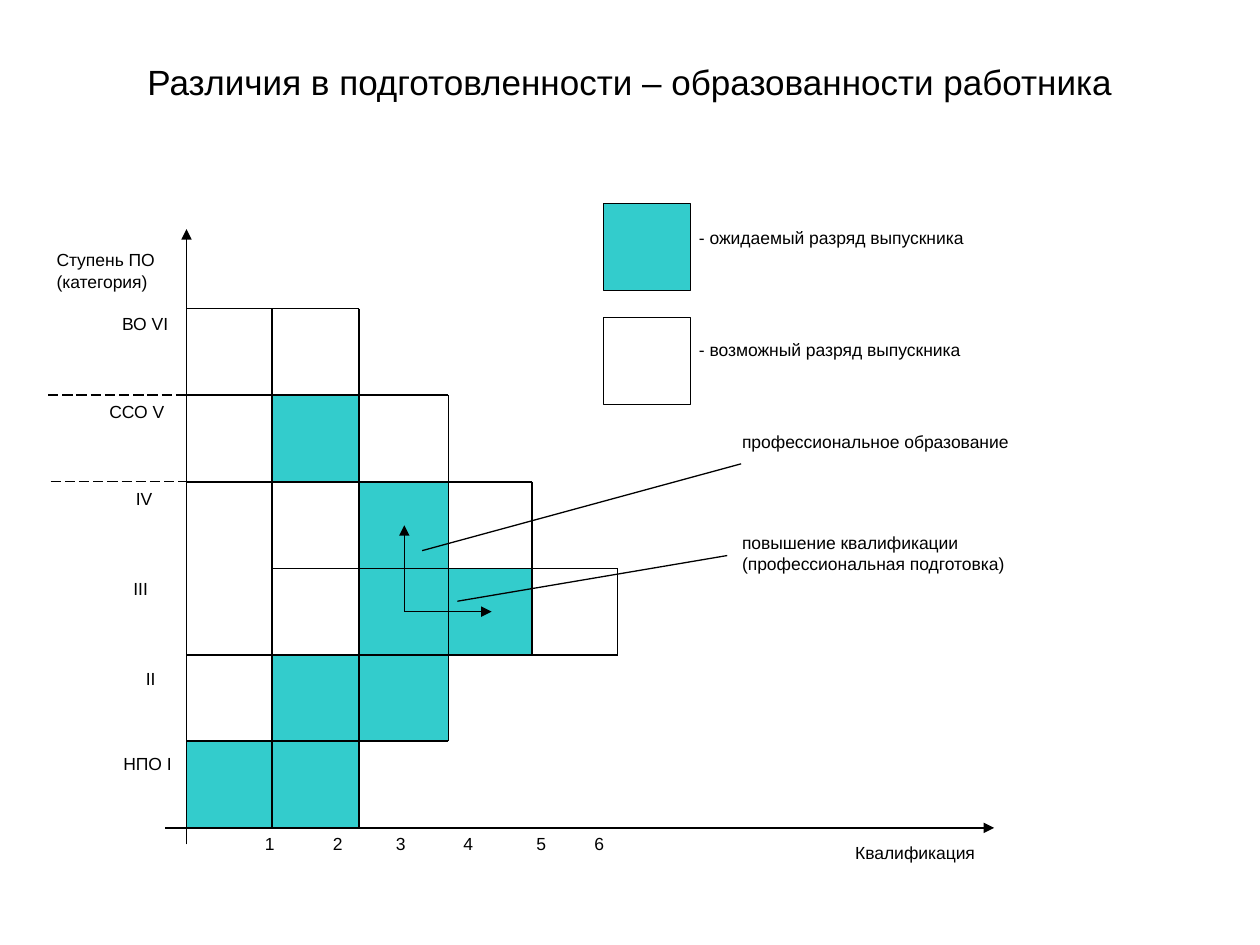
from typing import NamedTuple

from lxml import etree
from pptx import Presentation
from pptx.dml.color import RGBColor
from pptx.enum import dml, shapes, text
from pptx.oxml.ns import qn
from pptx.util import Cm, Pt

COLORS = {"ink": "000000", "expected": "33CCCC", "possible": "FFFFFF"}
FONT = "Arial"

COLUMN_EDGES = [3.76, 5.49, 7.24, 9.04, 10.72, 12.45]
GRID_TOP, GRID_BOTTOM = 6.22, 16.69
ROW_HEIGHT = (GRID_BOTTOM - GRID_TOP) / 6
ROW_EDGES = [GRID_TOP + ROW_HEIGHT * row for row in range(7)]
LEFT = COLUMN_EDGES[0]


class Cell(NamedTuple):
    column: int
    row: int
    color: str


class Label(NamedTuple):
    left: float
    top: float
    width: float
    height: float
    lines: list[str]
    align: text.PP_ALIGN = text.PP_ALIGN.LEFT
    size: float = 10
    anchor: text.MSO_ANCHOR = text.MSO_ANCHOR.TOP


class Stroke(NamedTuple):
    x1: float
    y1: float
    x2: float
    y2: float
    weight: float = 0.75
    arrow: bool = False
    dashed: bool = False


CELLS = [
    Cell(1, 1, "expected"), Cell(2, 2, "expected"),
    Cell(2, 3, "expected"), Cell(3, 3, "expected"),
    Cell(1, 4, "expected"), Cell(2, 4, "expected"),
    Cell(0, 5, "expected"), Cell(1, 5, "expected"),
    Cell(0, 2, "possible"), Cell(0, 3, "possible"),
]

# First and last crossing edge of each grid line, with its weight
ROW_SPANS = [(0, 2, 1), (0, 3, 1), (0, 4, 1), (1, 5, 0.75), (0, 5, 1), (0, 3, 1), (0, 4, 1)]
COLUMN_SPANS = [(0, 6), (0, 6), (0, 6), (1, 5), (2, 4), (3, 4)]

AXES = [
    Stroke(LEFT, 17.02, LEFT, 4.62, arrow=True),
    Stroke(3.33, GRID_BOTTOM, 20.04, GRID_BOTTOM, arrow=True),
]
LEVEL_BREAKS = [
    Stroke(0.97, ROW_EDGES[1], LEFT, ROW_EDGES[1], dashed=True),
    Stroke(1.02, ROW_EDGES[2], LEFT, ROW_EDGES[2], dashed=True),
]
GROWTH_ARROWS = [
    Stroke(8.15, 12.33, 9.91, 12.33, arrow=True),
    Stroke(8.15, 12.33, 8.15, 10.59, arrow=True),
]
CALLOUTS = [Stroke(8.51, 11.1, 14.94, 9.35), Stroke(9.22, 12.12, 14.66, 11.2)]

RIGHT = text.PP_ALIGN.RIGHT
CENTER = text.PP_ALIGN.CENTER
LABELS = [
    Label(1.27, 0.76, 22.86, 1.75, ["Различия в подготовленности – образованности работника"],
          CENTER, 20, text.MSO_ANCHOR.MIDDLE),
    Label(0.94, 4.93, 3.66, 1.3, ["Ступень ПО (категория)"]),
    Label(1.35, 6.22, 2.24, 1.04, ["ВО VI"], RIGHT),
    Label(0.94, 7.98, 2.57, 1.04, ["ССО V"], RIGHT),
    Label(2.54, 9.73, 1.14, 1.04, ["IV"]),
    Label(2.49, 11.56, 1.07, 1.04, ["III"]),
    Label(2.74, 13.36, 0.89, 1.04, ["II"]),
    Label(1.35, 15.09, 2.31, 1.04, ["НПО I"], RIGHT),
    Label(17.04, 16.87, 4.22, 0.79, ["Квалификация"]),
    Label(13.89, 4.47, 7.75, 1.04, ["- ожидаемый разряд выпускника"]),
    Label(13.89, 6.73, 8.15, 1.04, ["- возможный разряд выпускника"]),
    Label(14.76, 8.59, 7.11, 1.6, ["профессиональное образование"]),
    Label(14.76, 10.62, 7.01, 2.03,
          ["повышение квалификации", "(профессиональная подготовка)"]),
]
GRADE_CENTERS = [5.44, 6.81, 8.08, 9.44, 10.91, 12.08]
GRADE_WIDTH = 1


def rgb(name: str) -> RGBColor:
    return RGBColor.from_string(COLORS[name])


def draw_box(slide, left: float, top: float, width: float, height: float,
             fill: str, outlined: bool = False) -> None:
    box = slide.shapes.add_shape(shapes.MSO_SHAPE.RECTANGLE,
                                 Cm(left), Cm(top), Cm(width), Cm(height))
    box.shadow.inherit = False
    box.fill.solid()
    box.fill.fore_color.rgb = rgb(fill)
    if outlined:
        box.line.color.rgb = rgb("ink")
        box.line.width = Pt(0.75)
    else:
        box.line.fill.background()


def draw_cell(slide, cell: Cell) -> None:
    left, right = COLUMN_EDGES[cell.column:cell.column + 2]
    draw_box(slide, left, ROW_EDGES[cell.row], right - left, ROW_HEIGHT, cell.color)


def draw_stroke(slide, stroke: Stroke) -> None:
    connector = slide.shapes.add_connector(
        shapes.MSO_CONNECTOR.STRAIGHT,
        Cm(stroke.x1), Cm(stroke.y1), Cm(stroke.x2), Cm(stroke.y2))
    connector.line.color.rgb = rgb("ink")
    connector.line.width = Pt(stroke.weight)
    if stroke.dashed:
        connector.line.dash_style = dml.MSO_LINE.LONG_DASH
    if stroke.arrow:
        etree.SubElement(connector.line._get_or_add_ln(), qn("a:tailEnd"), type="triangle")
    etree.SubElement(connector._element.spPr, qn("a:effectLst"))


def draw_label(slide, label: Label) -> None:
    box = slide.shapes.add_textbox(Cm(label.left), Cm(label.top),
                                   Cm(label.width), Cm(label.height))
    frame = box.text_frame
    frame.word_wrap = True
    frame.vertical_anchor = label.anchor
    frame.margin_left = frame.margin_right = Cm(0.2)
    frame.margin_top = frame.margin_bottom = Cm(0.1)
    frame.text = "\n".join(label.lines)
    for paragraph in frame.paragraphs:
        paragraph.alignment = label.align
        paragraph.font.name = FONT
        paragraph.font.size = Pt(label.size)
        paragraph.font.color.rgb = rgb("ink")


def grid_strokes() -> list[Stroke]:
    rows = [Stroke(COLUMN_EDGES[first], y, COLUMN_EDGES[last], y, weight)
            for y, (first, last, weight) in zip(ROW_EDGES, ROW_SPANS)]
    columns = [Stroke(x, ROW_EDGES[first], x, ROW_EDGES[last], 1)
               for x, (first, last) in zip(COLUMN_EDGES, COLUMN_SPANS)]
    return rows + columns


def grade_labels() -> list[Label]:
    return [Label(center - GRADE_WIDTH / 2, GRID_BOTTOM, GRADE_WIDTH, 1.04, [str(grade)], CENTER)
            for grade, center in enumerate(GRADE_CENTERS, 1)]


def main() -> None:
    deck = Presentation()
    deck.slide_width, deck.slide_height = Cm(25.4), Cm(19.05)
    slide = deck.slides.add_slide(deck.slide_layouts[6])

    for cell in CELLS:
        draw_cell(slide, cell)
    for top, fill in [(4.11, "expected"), (6.4, "possible")]:
        draw_box(slide, 12.17, top, 1.75, 1.75, fill, outlined=True)
    for stroke in AXES + grid_strokes() + LEVEL_BREAKS + GROWTH_ARROWS + CALLOUTS:
        draw_stroke(slide, stroke)
    for label in LABELS + grade_labels():
        draw_label(slide, label)

    deck.save("out.pptx")


if __name__ == "__main__":
    main()
